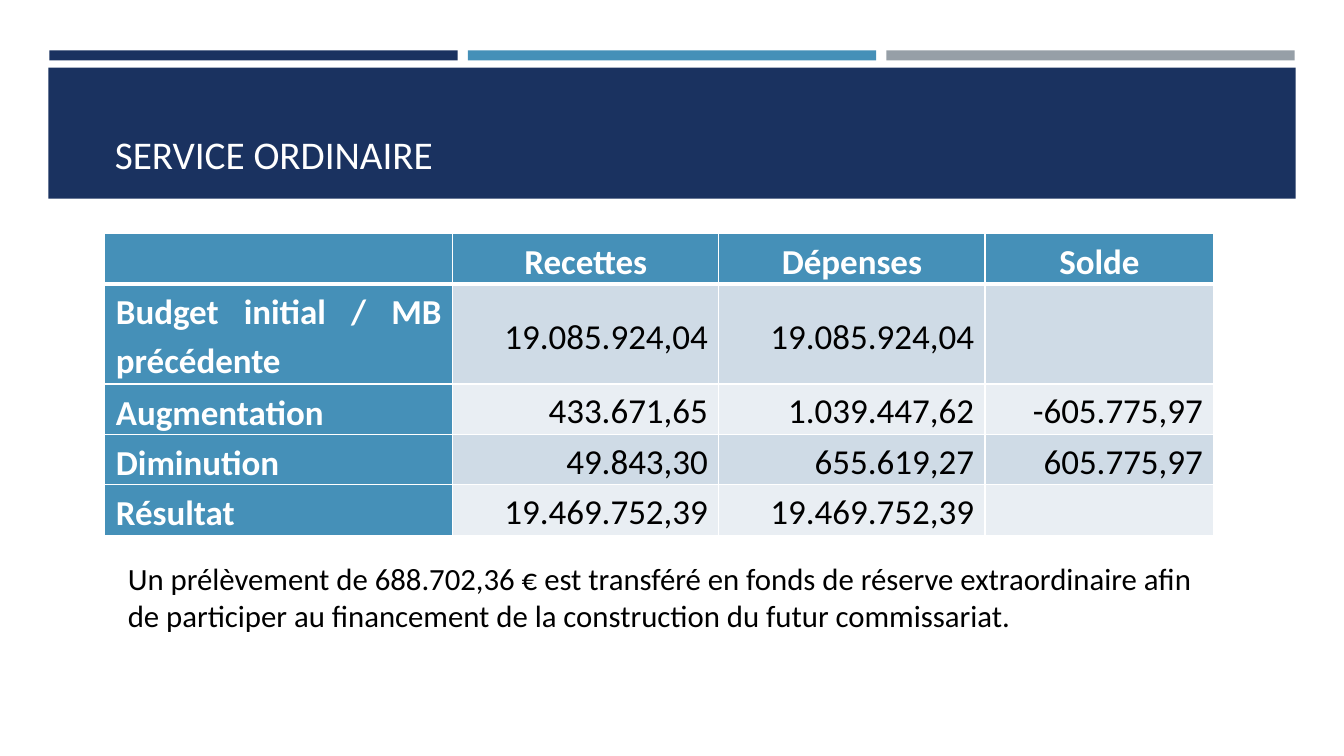
from lxml.etree import SubElement
from pptx import Presentation
from pptx.dml.color import RGBColor
from pptx.enum.shapes import MSO_SHAPE as Preset
from pptx.enum.text import MSO_ANCHOR as Anchor, MSO_AUTO_SIZE as AutoSize, PP_ALIGN as Align
from pptx.oxml import parse_xml
from pptx.oxml.ns import nsdecls, qn
from pptx.util import Pt

PX = 9144
NAVY = RGBColor(0x1A, 0x32, 0x60)
BLUE = RGBColor(0x45, 0x90, 0xB8)
GREY = RGBColor(0x96, 0x9F, 0xA7)
BAND_DARK = RGBColor(0xCF, 0xDB, 0xE6)
BAND_LIGHT = RGBColor(0xE9, 0xEE, 0xF3)
WHITE = RGBColor(0xFF, 0xFF, 0xFF)
BLACK = RGBColor(0x00, 0x00, 0x00)
FONT = "Calibri"

TITLE = "SERVICE ORDINAIRE"
BUDGET = [
    ["", "Recettes", "Dépenses", "Solde"],
    ["Budget initial / MB précédente", "19.085.924,04", "19.085.924,04", ""],
    ["Augmentation", "433.671,65", "1.039.447,62", "-605.775,97"],
    ["Diminution", "49.843,30", "655.619,27", "605.775,97"],
    ["Résultat", "19.469.752,39", "19.469.752,39", ""],
]
COLUMN_WIDTHS = [345, 264, 264, 227]
ROW_HEIGHTS = [50, 99, 50, 50, 50]
RESERVE_NOTE = (
    "Un prélèvement de 688.702,36 € est transféré en fonds de réserve extraordinaire "
    "afin de participer au financement de la construction du futur commissariat."
)


def px(*lengths):
    return [length * PX for length in lengths]


def add_bar(slide, left, top, width, height, color):
    bar = slide.shapes.add_shape(Preset.RECTANGLE, *px(left, top, width, height))
    bar.shadow.inherit = False
    bar.fill.solid()
    bar.fill.fore_color.rgb = color
    bar.line.fill.background()


def add_run(paragraph, text, size, color, bold=False):
    run = paragraph.add_run()
    run.text = text
    run.font.name = FONT
    run.font.size = Pt(size)
    run.font.bold = bold
    run.font.color.rgb = color


def add_text(slide, left, top, width, height, text, size, color, anchor, auto_size):
    frame = slide.shapes.add_textbox(*px(left, top, width, height)).text_frame
    frame.word_wrap = True
    frame.auto_size = auto_size
    frame.vertical_anchor = anchor
    add_run(frame.paragraphs[0], text, size, color)


def set_borders(cell, top, bottom):
    properties = cell._tc.get_or_add_tcPr()
    widths = {"lnL": 1, "lnR": 1, "lnT": top, "lnB": bottom}
    for position, (side, width) in enumerate(widths.items()):
        border = parse_xml(f'<a:{side} {nsdecls("a")} w="{Pt(width)}"/>')
        fill = SubElement(border, qn("a:solidFill"))
        SubElement(fill, qn("a:srgbClr"), val=str(WHITE))
        properties.insert(position, border)


def fill_cell(cell, text, row, column):
    is_heading = row == 0 or column == 0
    if is_heading:
        background = BLUE
    else:
        background = BAND_DARK if row % 2 else BAND_LIGHT
    cell.fill.solid()
    cell.fill.fore_color.rgb = background
    set_borders(cell, 3 if row == 1 else 1, 3 if row == 0 else 1)
    cell.margin_left, cell.margin_right, cell.margin_top, cell.margin_bottom = px(11, 11, 0, 0)
    if row == 1:
        cell.vertical_anchor = Anchor.MIDDLE
    else:
        cell.vertical_anchor = Anchor.BOTTOM if is_heading else Anchor.TOP
    if not text:
        return
    paragraph = cell.text_frame.paragraphs[0]
    if row == 0:
        paragraph.alignment = Align.CENTER
    else:
        paragraph.alignment = Align.JUSTIFY if column == 0 else Align.RIGHT
    paragraph.line_spacing = 1.15
    paragraph.space_after = Pt(10)
    add_run(paragraph, text, 25, WHITE if is_heading else BLACK, is_heading)


def add_budget_table(slide, left, top):
    size = sum(COLUMN_WIDTHS), sum(ROW_HEIGHTS)
    table = slide.shapes.add_table(
        len(BUDGET), len(COLUMN_WIDTHS), *px(left, top, *size)
    ).table
    table.first_col = True
    for column, width in zip(table.columns, px(*COLUMN_WIDTHS)):
        column.width = width
    for row, height in zip(table.rows, px(*ROW_HEIGHTS)):
        row.height = height
    for row, texts in enumerate(BUDGET):
        for column, text in enumerate(texts):
            fill_cell(table.cell(row, column), text, row, column)


def main():
    presentation = Presentation()
    presentation.slide_width, presentation.slide_height = px(1333, 750)
    slide = presentation.slides.add_slide(presentation.slide_layouts[6])
    for index, color in enumerate([NAVY, BLUE, GREY]):
        add_bar(slide, 49 + index * 415, 50, 405, 10, color)
    add_bar(slide, 48, 67, 1237, 130, NAVY)
    add_text(slide, 104, 76, 1100, 105, TITLE, 28, WHITE, Anchor.BOTTOM, AutoSize.NONE)
    add_budget_table(slide, 104, 232)
    add_text(slide, 117, 550, 1100, 84, RESERVE_NOTE, 22, BLACK,
             Anchor.TOP, AutoSize.SHAPE_TO_FIT_TEXT)
    presentation.save("out.pptx")


if __name__ == "__main__":
    main()
